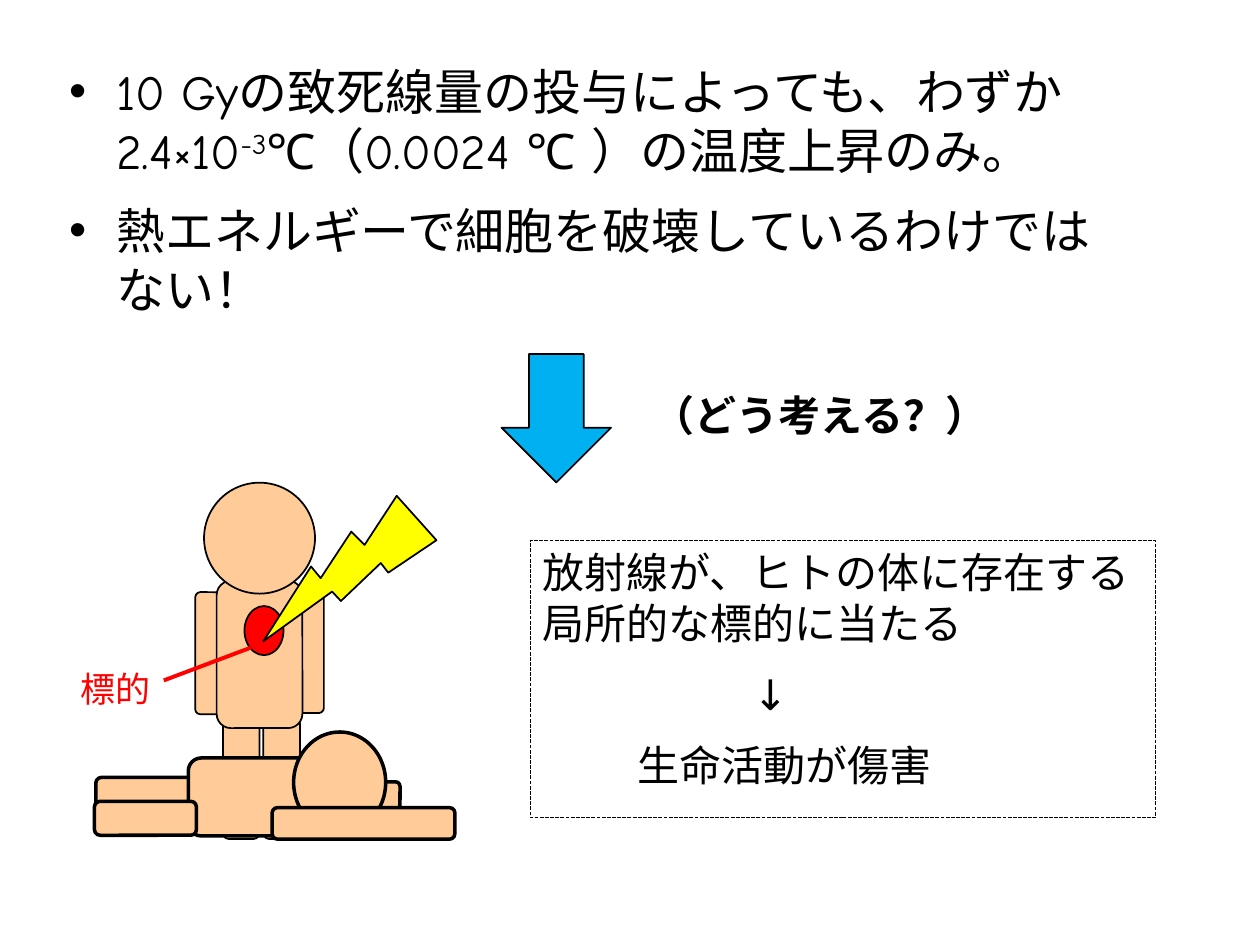
from lxml import etree
from pptx import Presentation
from pptx.dml.color import RGBColor
from pptx.enum.dml import MSO_LINE
from pptx.enum.shapes import MSO_CONNECTOR, MSO_SHAPE
from pptx.enum.text import MSO_ANCHOR, MSO_AUTO_SIZE, PP_ALIGN
from pptx.oxml.ns import qn
from pptx.util import Pt

RECT, ROUND, OVAL = MSO_SHAPE.RECTANGLE, MSO_SHAPE.ROUNDED_RECTANGLE, MSO_SHAPE.OVAL
DOWN, BOLT = MSO_SHAPE.DOWN_ARROW, MSO_SHAPE.LIGHTNING_BOLT
STRAIGHT, DASH = MSO_CONNECTOR.STRAIGHT, MSO_LINE.SQUARE_DOT
TOP, LEFT, FIT = MSO_ANCHOR.TOP, PP_ALIGN.LEFT, MSO_AUTO_SIZE.SHAPE_TO_FIT_TEXT

FONT = "Comic Neue"
COLORS = {"black": "000000", "skin": "FFCC99", "red": "FF0000",
          "blue": "00B0F0", "yellow": "FFFF00"}

STANDING = [
    (ROUND, 111.6, 338.4, 17.3, 69.8, 0),
    (ROUND, 167.8, 337.7, 17.3, 69.8, 0),
    (ROUND, 127.4, 409.7, 20.9, 69.8, 0),
    (ROUND, 150.5, 409.7, 20.9, 69.8, 0),
    (ROUND, 123.8, 331.9, 49, 84.2, 0),
    (OVAL, 116.6, 275.8, 63.4, 63.4, 0),
]
LYING = [
    (ROUND, 191.5, 425.5, 15.8, 58.3, 90),
    (ROUND, 74.2, 424.8, 19.4, 58.3, 90),
    (ROUND, 120.2, 420.5, 44.6, 69.8, 90),
    (OVAL, 167.8, 418.3, 52.6, 57.6, 0),
    (ROUND, 198.7, 418.3, 18, 104.4, 90),
    (ROUND, 73.4, 438.5, 19.4, 58.3, 90),
]
FACTS = [
    [("10 Gyの致死線量の投与によっても、わずか2.4×10", False), ("-3", True),
     ("℃（0.0024 ℃ ）の温度上昇のみ。", False)],
    [("熱エネルギーで細胞を破壊しているわけではない！", False)],
]
EXPLANATION = [
    ("放射線が、ヒトの体に存在する", 0, 0),
    ("局所的な標的に当たる", 0, 12),
    ("↓", 120, 12),
    ("生命活動が傷害", 54, 12),
]


def rgb(name):
    return RGBColor.from_string(COLORS[name])


def add_shape(shapes, kind, x, y, w, h, rotation=0, fill=None, weight=1):
    sp = shapes.add_shape(kind, Pt(x), Pt(y), Pt(w), Pt(h))
    sp.shadow.inherit = False
    sp.rotation = rotation
    if fill:
        sp.fill.solid()
        sp.fill.fore_color.rgb = rgb(fill)
    else:
        sp.fill.background()
    sp.line.color.rgb = rgb("black")
    sp.line.width = Pt(weight)
    return sp


def add_figure(s, parts, weight):
    group = s.shapes.add_group_shape()
    for part in parts:
        add_shape(group.shapes, *part, fill="skin", weight=weight)


def add_run(p, text, size, color="black", bold=False):
    r = p.add_run()
    r.text = text
    r.font.name = FONT
    r.font.size = Pt(size)
    r.font.bold = bold
    r.font.color.rgb = rgb(color)
    return r


def next_paragraph(tf, index):
    return tf.add_paragraph() if index else tf.paragraphs[0]


def add_label(shapes, x, y, w, h, text, size, color="black", bold=False):
    tf = shapes.add_textbox(Pt(x), Pt(y), Pt(w), Pt(h)).text_frame
    tf.word_wrap = False
    tf.auto_size = FIT
    add_run(tf.paragraphs[0], text, size, color, bold)


def add_line(shapes, x1, y1, x2, y2, color, weight):
    line = shapes.add_connector(STRAIGHT, Pt(x1), Pt(y1), Pt(x2), Pt(y2))
    line.line.color.rgb = rgb(color)
    line.line.width = Pt(weight)
    etree.SubElement(line._element.spPr, qn("a:effectLst"))


def add_facts(s):
    tf = s.shapes.add_textbox(Pt(32.4), Pt(31.7), Pt(622), Pt(175.7)).text_frame
    tf.word_wrap = True
    for i, runs in enumerate(FACTS):
        p = next_paragraph(tf, i)
        p.space_after = Pt(12)
        pPr = p._p.get_or_add_pPr()
        pPr.set("marL", str(Pt(27)))
        pPr.set("indent", str(-Pt(27)))
        etree.SubElement(pPr, qn("a:buFont"), typeface="Arial")
        etree.SubElement(pPr, qn("a:buChar"), char="•")
        for text, raised in runs:
            r = add_run(p, text, 28)
            if raised:
                r._r.get_or_add_rPr().set("baseline", "30000")


def add_explanation(s):
    sp = add_shape(s.shapes, RECT, 303.1, 308.9, 357.1, 158.4, weight=0.75)
    sp.line.dash_style = DASH
    tf = sp.text_frame
    tf.word_wrap = True
    tf.vertical_anchor = TOP
    for i, (text, indent, after) in enumerate(EXPLANATION):
        p = next_paragraph(tf, i)
        p.alignment = LEFT
        p.space_after = Pt(after)
        p._p.get_or_add_pPr().set("marL", str(Pt(indent)))
        add_run(p, text, 24)


def main():
    prs = Presentation()
    prs.slide_width, prs.slide_height = Pt(720), Pt(540)
    s = prs.slides.add_slide(prs.slide_layouts[6])

    add_facts(s)
    add_explanation(s)

    question = s.shapes.add_group_shape().shapes
    add_shape(question, DOWN, 286.6, 202.3, 62.6, 73.4, fill="blue")
    add_label(question, 365.8, 218.9, 209.5, 36, "（どう考える？）", 24, bold=True)

    add_figure(s, STANDING, 1)
    add_figure(s, LYING, 2)

    add_shape(s.shapes, OVAL, 139.7, 346.3, 22.3, 28.1, fill="red")
    target = s.shapes.add_group_shape().shapes
    add_line(target, 143.3, 370.1, 93.6, 388.8, "red", 2.25)
    add_label(target, 38.9, 378, 54.7, 31.7, "標的", 20, "red")
    add_shape(s.shapes, BOLT, 162, 270.7, 72, 105.8, 82.2, fill="yellow")

    prs.save("out.pptx")


if __name__ == "__main__":
    main()
